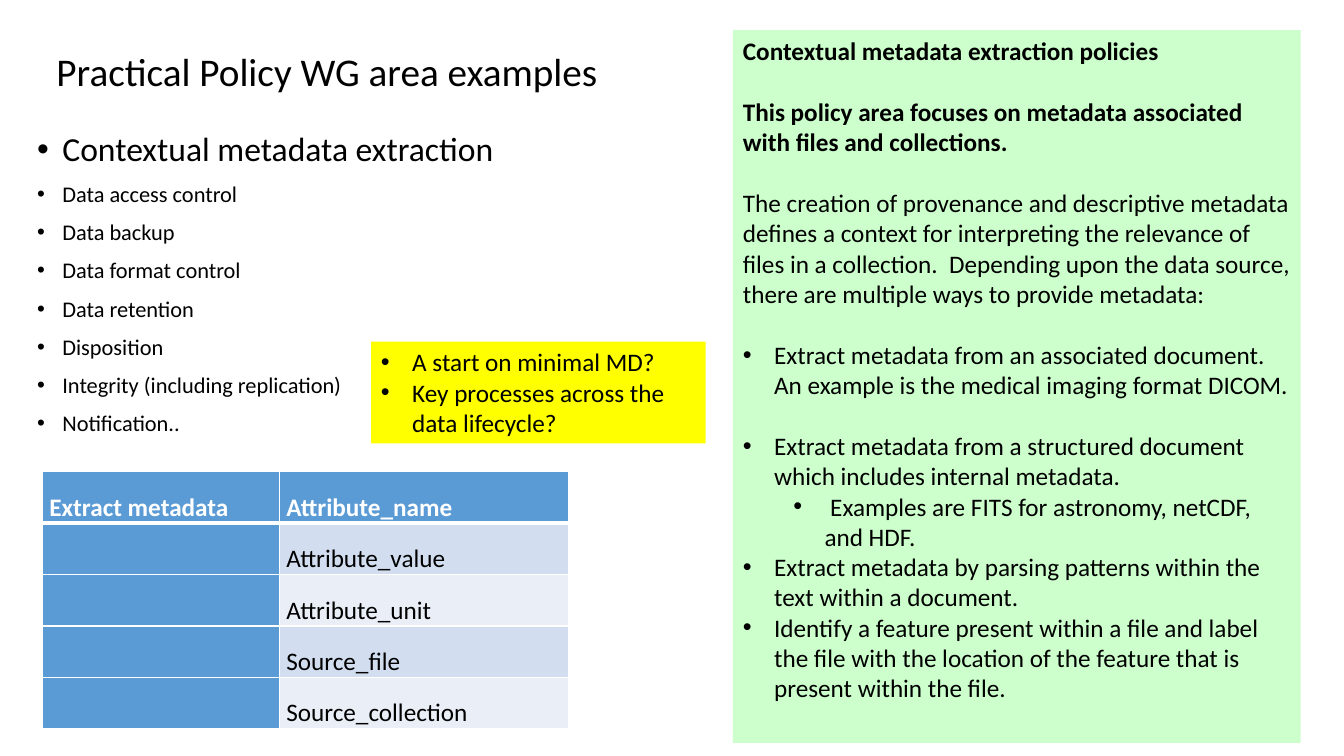
from lxml import etree
from pptx import Presentation
from pptx.dml.color import RGBColor
from pptx.enum.text import MSO_ANCHOR, MSO_AUTO_SIZE, PP_ALIGN
from pptx.oxml.ns import qn
from pptx.util import Inches, Pt

LEFT, TOP, MIDDLE, BOTTOM = PP_ALIGN.LEFT, MSO_ANCHOR.TOP, MSO_ANCHOR.MIDDLE, MSO_ANCHOR.BOTTOM
NO_FIT = MSO_AUTO_SIZE.NONE
FONT = "Calibri"
LINE_GAP = 22
COLOURS = {
    "text": "000000", "white": "FFFFFF", "policy": "CCFFCC", "question": "FFFF00",
    "header": "5B9BD5", "odd": "D2DEEF", "even": "EAEFF7",
}


def write(frame, text, size=18, bold=False, colour="text", indent=0, hang=0,
          before=0, after=0, spacing=1.0, first=False):
    para = frame.paragraphs[0] if first else frame.add_paragraph()
    para.alignment = LEFT
    para.line_spacing = spacing
    para.space_before, para.space_after = Pt(before), Pt(after)
    span = para.add_run()
    span.text = text
    span.font.name, span.font.size, span.font.bold = FONT, Pt(size), bold
    span.font.color.rgb = RGBColor.from_string(COLOURS[colour])
    if hang:
        properties = para._p.get_or_add_pPr()
        properties.set("marL", str(Inches(indent + hang)))
        properties.set("indent", str(-Inches(hang)))
        etree.SubElement(properties, qn("a:buFont")).set("typeface", "Arial")
        etree.SubElement(properties, qn("a:buChar")).set("char", "•")


def add_panel(page, left, top, width, height, fill=None):
    box = page.shapes.add_textbox(Inches(left), Inches(top), Inches(width), Inches(height))
    box.text_frame.word_wrap = True
    box.text_frame.auto_size = NO_FIT
    box.text_frame.vertical_anchor = TOP
    if fill:
        box.fill.solid()
        box.fill.fore_color.rgb = RGBColor.from_string(COLOURS[fill])
    return box.text_frame


deck = Presentation()
deck.slide_width, deck.slide_height = Inches(13.33), Inches(7.5)
page = deck.slides.add_slide(deck.slide_layouts[5])

title = page.shapes.title
title.left, title.top, title.width, title.height = map(Inches, (0.46, 0.3, 6.2, 0.87))
title.text_frame.word_wrap = True
title.text_frame.auto_size = NO_FIT
title.text_frame.vertical_anchor = MIDDLE
write(title.text_frame, "Practical Policy WG area examples", size=28, spacing=0.9, first=True)

areas = [
    "Contextual metadata extraction", "Data access control", "Data backup",
    "Data format control", "Data retention", "Disposition",
    "Integrity (including replication)", "Notification..",
]
area_frame = add_panel(page, 0.27, 1.27, 5.52, 3.16)
for index, area in enumerate(areas):
    write(area_frame, area, size=16 if index else 24, hang=0.25, before=10,
          spacing=0.9, first=index == 0)

policies = [
    ("Contextual metadata extraction policies", {"bold": True, "after": LINE_GAP}),
    ("This policy area focuses on metadata associated with files and collections.",
     {"bold": True, "after": LINE_GAP}),
    ("The creation of provenance and descriptive metadata defines a context for "
     "interpreting the relevance of files in a collection.  Depending upon the data "
     "source, there are multiple ways to provide metadata:", {"after": LINE_GAP}),
    ("Extract metadata from an associated document.  An example is the medical "
     "imaging format DICOM.", {"hang": 0.31, "after": LINE_GAP}),
    ("Extract metadata from a structured document which includes internal metadata.",
     {"hang": 0.31}),
    (" Examples are FITS for astronomy, netCDF, and HDF.", {"hang": 0.31, "indent": 0.5}),
    ("Extract metadata by parsing patterns within the text within a document.",
     {"hang": 0.31}),
    ("Identify a feature present within a file and label the file with the location "
     "of the feature that is present within the file.", {"hang": 0.31}),
]
policy_frame = add_panel(page, 7.27, 0.3, 5.63, 7.07, fill="policy")
for index, (text, style) in enumerate(policies):
    write(policy_frame, text, first=index == 0, **style)

attributes = ["Attribute_name", "Attribute_value", "Attribute_unit", "Source_file",
              "Source_collection"]
row_height = 0.51
table = page.shapes.add_table(len(attributes), 2, Inches(0.42), Inches(4.68), Inches(5.22),
                              Inches(row_height * len(attributes))).table
table.columns[0].width, table.columns[1].width = Inches(2.35), Inches(2.87)
for row, attribute in enumerate(attributes):
    table.rows[row].height = Inches(row_height)
    for column, text in enumerate(("" if row else "Extract metadata", attribute)):
        cell = table.cell(row, column)
        cell.vertical_anchor = BOTTOM
        cell.margin_left = cell.margin_right = Inches(0.07)
        cell.margin_top = cell.margin_bottom = 0
        band = "header" if row == 0 or column == 0 else "odd" if row % 2 else "even"
        cell.fill.solid()
        cell.fill.fore_color.rgb = RGBColor.from_string(COLOURS[band])
        if text:
            write(cell.text_frame, text, bold=row == 0,
                  colour="text" if row else "white", first=True)
        cell_properties = cell._tc.get_or_add_tcPr()
        for position, side in enumerate(("lnL", "lnR", "lnT", "lnB")):
            heavy = (row, side) in ((0, "lnB"), (1, "lnT"))
            border = etree.Element(qn("a:" + side), w=str(Pt(3 if heavy else 1)))
            paint = etree.SubElement(border, qn("a:solidFill"))
            etree.SubElement(paint, qn("a:srgbClr")).set("val", COLOURS["white"])
            cell_properties.insert(position, border)

question_frame = add_panel(page, 3.68, 3.39, 3.32, 1.01, fill="question")
questions = ["A start on minimal MD?", "Key processes across the data lifecycle?"]
for index, question in enumerate(questions):
    write(question_frame, question, hang=0.31, first=index == 0)

deck.save("out.pptx")
